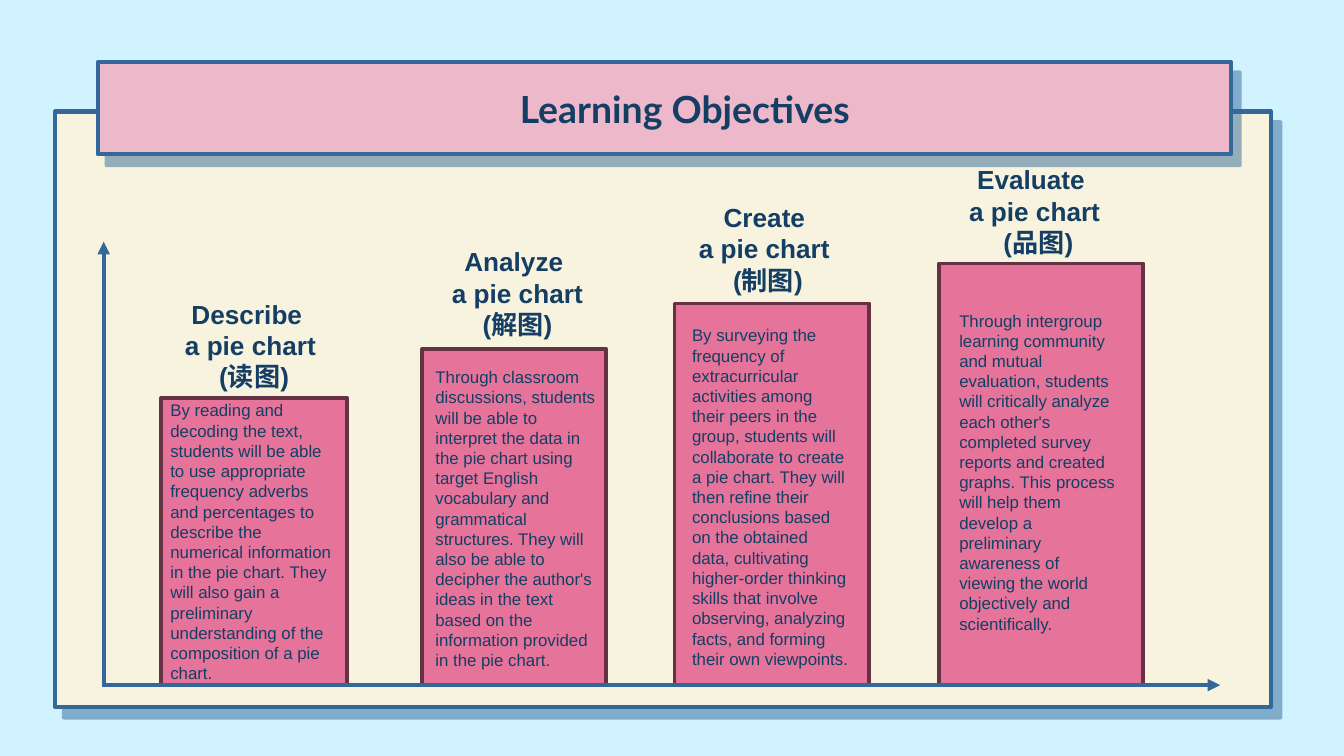
from dataclasses import dataclass

from lxml.etree import SubElement
from pptx import Presentation
from pptx.dml.color import RGBColor
from pptx.enum.shapes import MSO_CONNECTOR, MSO_SHAPE
from pptx.enum.text import MSO_ANCHOR, PP_ALIGN
from pptx.oxml.ns import qn
from pptx.shapes.autoshape import Shape
from pptx.shapes.shapetree import GroupShapes, SlideShapes
from pptx.slide import Slide
from pptx.text.text import _Paragraph as Paragraph
from pptx.util import Cm, Pt

SKY = RGBColor(0xD0, 0xF3, 0xFF)
CREAM = RGBColor(0xF8, 0xF3, 0xDE)
BLUE = RGBColor(0x34, 0x67, 0x9A)
NAVY = RGBColor(0x14, 0x3E, 0x63)
PINK = RGBColor(0xE5, 0x73, 0x9A)
PALE_PINK = RGBColor(0xEC, 0xB8, 0xCA)
PLUM = RGBColor(0x64, 0x32, 0x43)

BASELINE = 12.95
HEADING_HEIGHT = 2.06


@dataclass(frozen=True)
class Box:
    """A rectangle in centimetres."""
    left: float
    top: float
    width: float
    height: float

    def lengths(self) -> tuple[Cm, Cm, Cm, Cm]:
        return Cm(self.left), Cm(self.top), Cm(self.width), Cm(self.height)


@dataclass(frozen=True)
class Objective:
    heading: tuple[str, ...]
    description: str
    heading_left: float
    heading_top: float
    heading_width: float
    bar_left: float
    bar_top: float
    bar_width: float
    description_box: Box


OBJECTIVES = (
    Objective(
        ("Describe ", "a pie chart", " (读图)"),
        "By reading and decoding the text, students will be able to use appropriate "
        "frequency adverbs and percentages to describe the numerical information in the "
        "pie chart. They will also gain a preliminary understanding of the composition "
        "of a pie chart.",
        1.98, 5.51, 5.51, 3.05, 7.52, 3.51, Box(2.97, 7.44, 3.66, 6.02)),
    Objective(
        ("Analyze ", "a pie chart", "(解图)"),
        "Through classroom discussions, students will be able to interpret the data in "
        "the pie chart using target English vocabulary and grammatical structures. They "
        "will also be able to decipher the author's ideas in the text based on the "
        "information provided in the pie chart.",
        7.06, 4.52, 5.44, 7.98, 6.6, 3.48, Box(7.98, 6.81, 3.56, 6.02)),
    Objective(
        ("Create ", "a pie chart ", "(制图)"),
        "By surveying the frequency of extracurricular activities among their peers in "
        "the group, students will collaborate to create a pie chart. They will then "
        "refine their conclusions based on the obtained data, cultivating higher-order "
        "thinking skills that involve observing, analyzing facts, and forming their own "
        "viewpoints.",
        12.24, 3.68, 4.55, 12.75, 5.74, 3.68, Box(12.83, 6.02, 3.48, 6.81)),
    Objective(
        ("Evaluate ", "a pie chart", " (品图)"),
        "Through intergroup learning community and mutual evaluation, students will "
        "critically analyze each other's completed survey reports and created graphs. "
        "This process will help them develop a preliminary awareness of viewing the "
        "world objectively and scientifically.",
        16.99, 2.97, 5.13, 17.75, 4.98, 3.86, Box(17.88, 5.74, 3.48, 6.4)),
)


def add_rectangle(shapes: SlideShapes | GroupShapes, box: Box, fill: RGBColor,
                  outline: RGBColor, weight: float) -> Shape:
    shape = shapes.add_shape(MSO_SHAPE.RECTANGLE, *box.lengths())
    shape.shadow.inherit = False
    shape.fill.solid()
    shape.fill.fore_color.rgb = fill
    shape.line.color.rgb = outline
    shape.line.width = Pt(weight)
    return shape


def add_hard_shadow(shape: Shape) -> None:
    effects = shape._element.spPr.find(qn("a:effectLst"))
    shadow = SubElement(effects, qn("a:outerShdw"), blurRad="0", dist=str(Pt(7.5)),
                        dir=str(50 * 60000), algn="bl", rotWithShape="0")
    color = SubElement(shadow, qn("a:srgbClr"), val=str(BLUE))
    SubElement(color, qn("a:alpha"), val="50000")


def style_paragraph(paragraph: Paragraph, size: float, font: str = "Arial",
                    bold: bool = False, alignment: PP_ALIGN = PP_ALIGN.LEFT) -> None:
    paragraph.alignment = alignment
    paragraph.font.name = font
    paragraph.font.size = Pt(size)
    paragraph.font.bold = bold
    paragraph.font.color.rgb = NAVY


def add_text(shapes: SlideShapes | GroupShapes, box: Box, lines: tuple[str, ...],
             size: float, bold: bool = False,
             alignment: PP_ALIGN = PP_ALIGN.LEFT) -> None:
    frame = shapes.add_textbox(*box.lengths()).text_frame
    frame.word_wrap = True
    frame.text = "\n".join(lines)
    for paragraph in frame.paragraphs:
        style_paragraph(paragraph, size, bold=bold, alignment=alignment)


def add_bar(slide: Slide, objective: Objective) -> None:
    group = slide.shapes.add_group_shape()
    bar = Box(objective.bar_left, objective.bar_top, objective.bar_width,
              BASELINE - objective.bar_top)
    add_rectangle(group.shapes, bar, PINK, PLUM, 2)
    add_text(group.shapes, objective.description_box, (objective.description,), 9)


def add_heading(slide: Slide, objective: Objective) -> None:
    box = Box(objective.heading_left, objective.heading_top, objective.heading_width,
              HEADING_HEIGHT)
    add_text(slide.shapes, box, objective.heading, 14, True, PP_ALIGN.CENTER)


def add_title(slide: Slide) -> None:
    banner = add_rectangle(slide.shapes, Box(1.85, 1.17, 21.41, 1.75), PALE_PINK, BLUE, 2.25)
    add_hard_shadow(banner)
    frame = banner.text_frame
    frame.word_wrap = True
    frame.vertical_anchor = MSO_ANCHOR.MIDDLE
    frame.margin_top = frame.margin_right = frame.margin_bottom = Cm(0.25)
    frame.margin_left = Cm(1.03)  # nudges the centred title to the right
    frame.text = "Learning Objectives"
    style_paragraph(frame.paragraphs[0], 20, "Lato", True, PP_ALIGN.CENTER)


def add_axis(slide: Slide, start_x: float, end_x: float, end_y: float) -> None:
    axis = slide.shapes.add_connector(MSO_CONNECTOR.STRAIGHT, Cm(start_x), Cm(BASELINE),
                                      Cm(end_x), Cm(end_y))
    axis.line.color.rgb = BLUE
    axis.line.width = Pt(2.25)
    SubElement(axis.line._get_or_add_ln(), qn("a:tailEnd"), type="triangle")
    SubElement(axis._element.spPr, qn("a:effectLst"))


def main() -> None:
    presentation = Presentation()
    presentation.slide_width, presentation.slide_height = Cm(25.4), Cm(14.29)
    slide = presentation.slides.add_slide(presentation.slide_layouts[6])

    # Background and panel
    slide.background.fill.solid()
    slide.background.fill.fore_color.rgb = SKY
    panel = add_rectangle(slide.shapes, Box(1.04, 2.11, 22.99, 11.25), CREAM, BLUE, 2.25)
    add_hard_shadow(panel)

    # Rising bars
    for objective in OBJECTIVES:
        add_bar(slide, objective)

    # Title and axes
    add_title(slide)
    add_axis(slide, 1.96, 1.96, 4.57)
    add_axis(slide, 1.93, 23.06, BASELINE)

    # Headings above the bars
    for objective in OBJECTIVES:
        add_heading(slide, objective)

    presentation.save("out.pptx")


if __name__ == "__main__":
    main()
